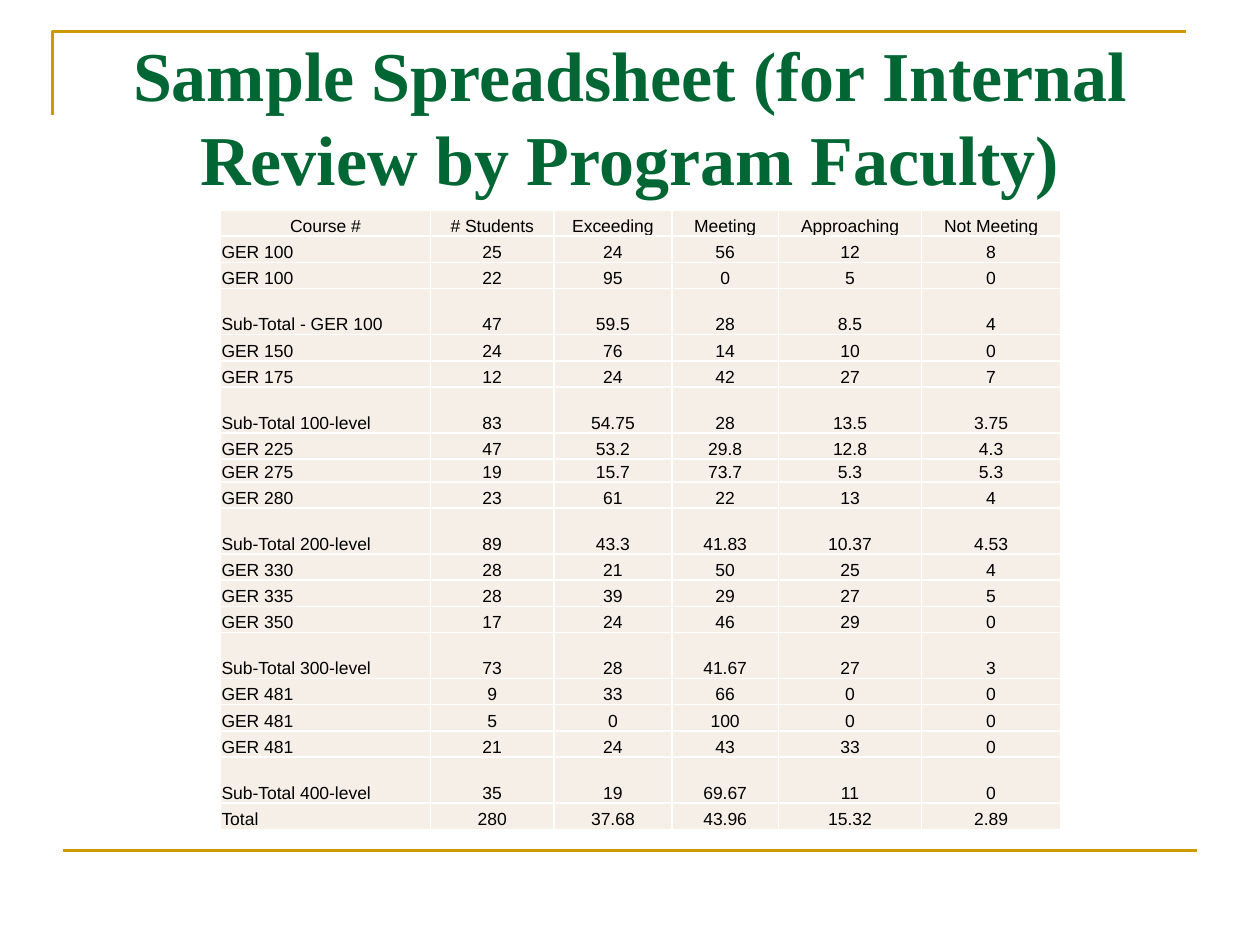
import pptx
import pptx.util
import pptx.dml.color
import pptx.enum.shapes
import pptx.enum.text
import pptx.oxml
import pptx.oxml.ns
from lxml import etree

Pt = pptx.util.Pt
ALIGN = pptx.enum.text.PP_ALIGN
ANCHOR = pptx.enum.text.MSO_ANCHOR

GOLD, GREEN, BLACK, WHITE, CREAM = "CC9900", "006633", "000000", "FFFFFF", "F6EFE7"

COLUMN_WIDTHS = [120, 70.5, 67.5, 60.75, 82, 79.25]
ROW_HEIGHT, SUBTOTAL_HEIGHT = 15, 26.2
SPECIAL_HEIGHTS = {"GER 275": 13}
ROWS = [
    ("Course #", "# Students", "Exceeding", "Meeting", "Approaching", "Not Meeting"),
    ("GER 100", "25", "24", "56", "12", "8"),
    ("GER 100", "22", "95", "0", "5", "0"),
    ("Sub-Total - GER 100", "47", "59.5", "28", "8.5", "4"),
    ("GER 150", "24", "76", "14", "10", "0"),
    ("GER 175", "12", "24", "42", "27", "7"),
    ("Sub-Total 100-level", "83", "54.75", "28", "13.5", "3.75"),
    ("GER 225", "47", "53.2", "29.8", "12.8", "4.3"),
    ("GER 275", "19", "15.7", "73.7", "5.3", "5.3"),
    ("GER 280", "23", "61", "22", "13", "4"),
    ("Sub-Total 200-level", "89", "43.3", "41.83", "10.37", "4.53"),
    ("GER 330", "28", "21", "50", "25", "4"),
    ("GER 335", "28", "39", "29", "27", "5"),
    ("GER 350", "17", "24", "46", "29", "0"),
    ("Sub-Total 300-level", "73", "28", "41.67", "27", "3"),
    ("GER 481", "9", "33", "66", "0", "0"),
    ("GER 481", "5", "0", "100", "0", "0"),
    ("GER 481", "21", "24", "43", "33", "0"),
    ("Sub-Total 400-level", "35", "19", "69.67", "11", "0"),
    ("Total", "280", "37.68", "43.96", "15.32", "2.89"),
]


def rgb(color):
    return pptx.dml.color.RGBColor.from_string(color)


def add_run(p, text, font, size, color, bold=False):
    r = p.add_run()
    r.text = text
    r.font.name, r.font.size, r.font.bold = font, Pt(size), bold
    r.font.color.rgb = rgb(color)


def set_line(sp, color, width):
    sp.line.color.rgb = rgb(color)
    sp.line.width = Pt(width)


def add_corner_rule(s, x, y, w, h):
    builder = s.shapes.build_freeform(Pt(x), Pt(y + h), scale=1.0)
    builder.add_line_segments([(Pt(x), Pt(y)), (Pt(x + w), Pt(y))], close=False)
    sp = builder.convert_to_shape()
    sp.shadow.inherit = False
    sp.fill.background()
    set_line(sp, GOLD, 1.5)


def add_bottom_rule(s, x, y, w):
    straight = pptx.enum.shapes.MSO_CONNECTOR.STRAIGHT
    line = s.shapes.add_connector(straight, Pt(x), Pt(y), Pt(x + w), Pt(y))
    set_line(line, GOLD, 1.5)
    properties = line._element.spPr
    etree.SubElement(properties, pptx.oxml.ns.qn("a:effectLst"))


def add_title(s, x, y, w, h):
    tf = s.shapes.add_textbox(Pt(x), Pt(y), Pt(w), Pt(h)).text_frame
    tf.word_wrap = True
    tf.vertical_anchor = ANCHOR.TOP
    tf.margin_top = Pt(6)
    p = tf.paragraphs[0]
    p.alignment = ALIGN.CENTER
    p.line_spacing = Pt(48)
    add_run(p, "Sample Spreadsheet (for Internal Review by Program Faculty)",
            "Times New Roman", 40, GREEN, bold=True)


def set_borders(cell, color, width):
    properties = cell._tc.get_or_add_tcPr()
    for side in ("lnL", "lnR", "lnT", "lnB"):
        properties.append(pptx.oxml.parse_xml(
            f'<a:{side} {pptx.oxml.ns.nsdecls("a")} w="{Pt(width)}">'
            f'<a:solidFill><a:srgbClr val="{color}"/></a:solidFill></a:{side}>'))


def fill_cell(cell, text, alignment):
    set_borders(cell, WHITE, 1)
    cell.fill.solid()
    cell.fill.fore_color.rgb = rgb(CREAM)
    cell.vertical_anchor = ANCHOR.BOTTOM
    cell.margin_left = cell.margin_right = cell.margin_top = Pt(0.6)
    cell.margin_bottom = 0
    p = cell.text_frame.paragraphs[0]
    p.alignment = alignment
    add_run(p, text, "Arial", 10, BLACK)


def row_height(label):
    if label.startswith("Sub-Total"):
        return SUBTOTAL_HEIGHT
    return SPECIAL_HEIGHTS.get(label, ROW_HEIGHT)


def add_results_table(s, x, y):
    heights = [row_height(row[0]) for row in ROWS]
    table = s.shapes.add_table(len(ROWS), len(COLUMN_WIDTHS), Pt(x), Pt(y),
                               Pt(sum(COLUMN_WIDTHS)), Pt(sum(heights))).table
    table.first_row = table.horz_banding = False
    for column, width in zip(table.columns, COLUMN_WIDTHS):
        column.width = Pt(width)
    for i, (values, height) in enumerate(zip(ROWS, heights)):
        table.rows[i].height = Pt(height)
        for j, text in enumerate(values):
            is_course = i > 0 and j == 0
            fill_cell(table.cell(i, j), text, ALIGN.LEFT if is_course else ALIGN.CENTER)


def main():
    prs = pptx.Presentation()
    prs.slide_width, prs.slide_height = Pt(720), Pt(540)
    s = prs.slides.add_slide(prs.slide_layouts[6])
    s.background.fill.solid()
    s.background.fill.fore_color.rgb = rgb(WHITE)
    add_corner_rule(s, 30, 18, 648, 48)
    add_bottom_rule(s, 36, 486, 648)
    add_title(s, 36, 12, 648, 90)
    add_results_table(s, 126, 120)
    prs.save("out.pptx")


if __name__ == "__main__":
    main()
